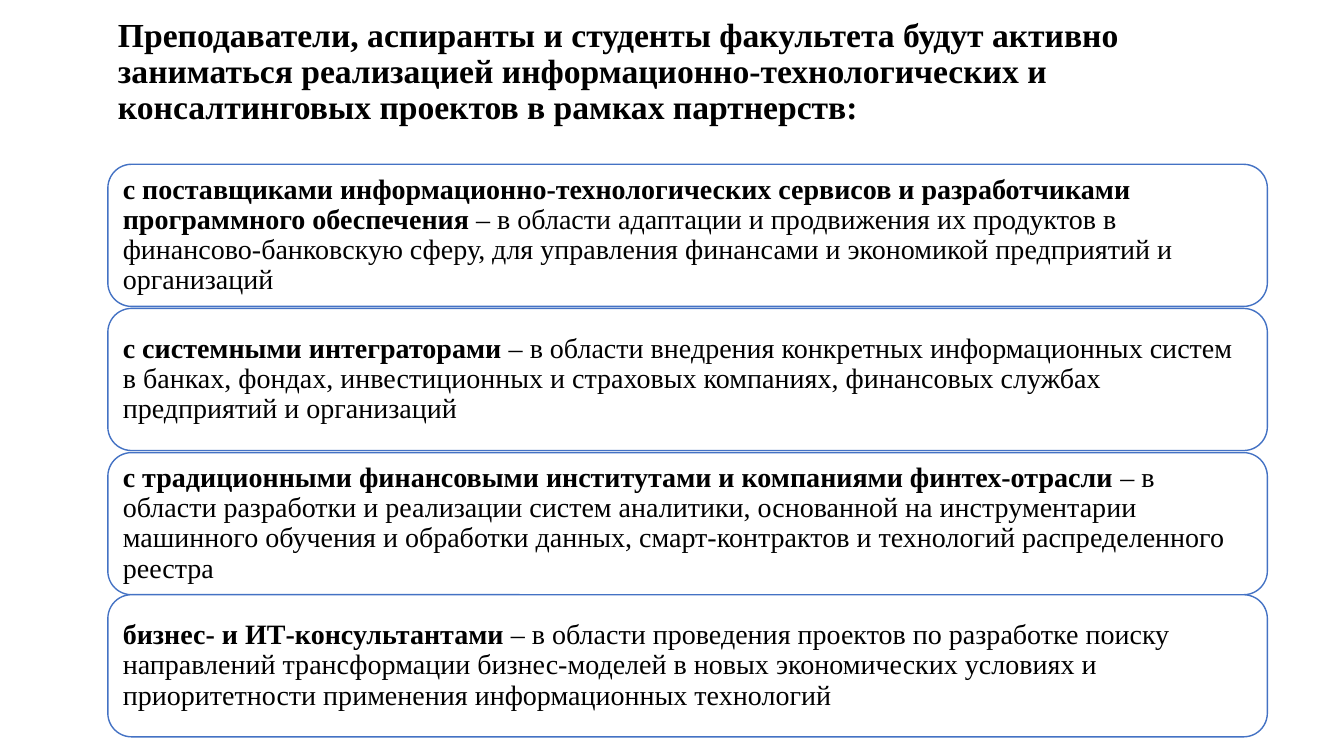
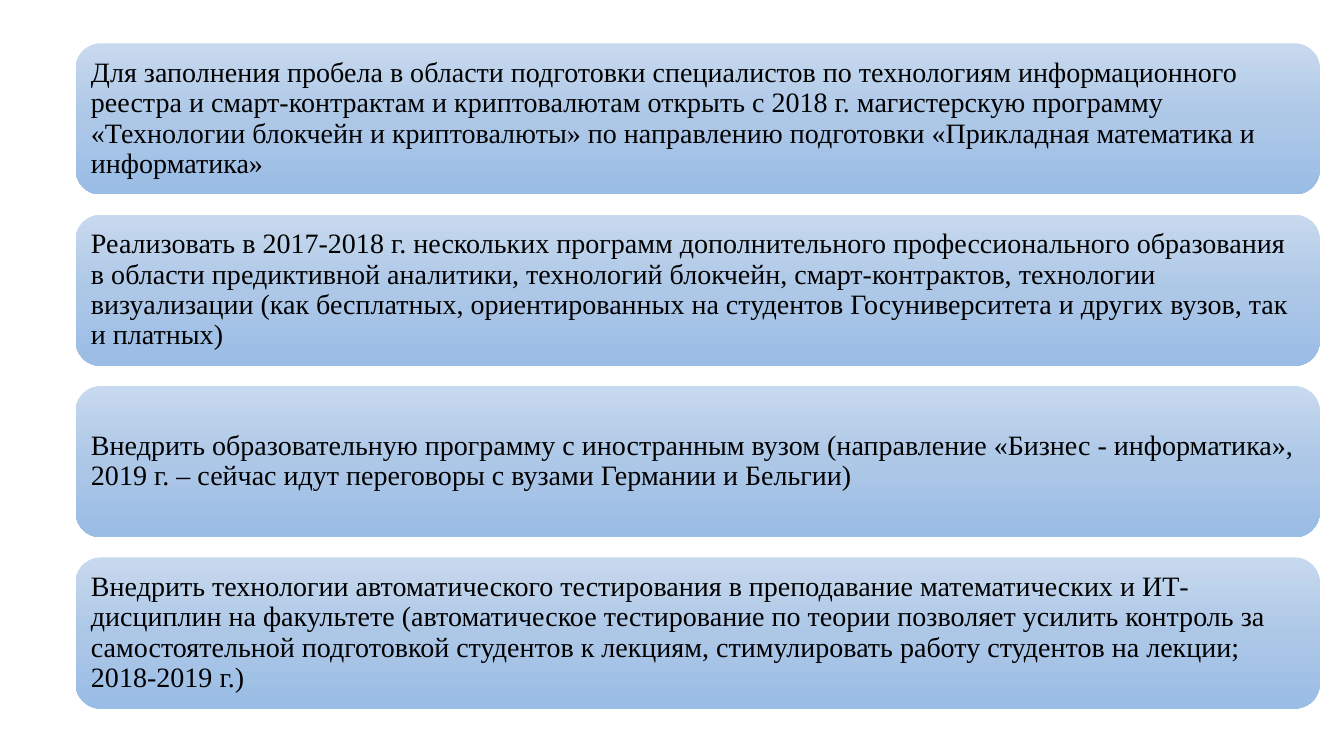
import copy

import pptx
import pptx.dml.color
import pptx.enum.shapes
import pptx.enum.text
import pptx.oxml.ns
import pptx.util

Inches = pptx.util.Inches
Pt = pptx.util.Pt
RGBColor = pptx.dml.color.RGBColor

BLACK = RGBColor(0x00, 0x00, 0x00)
WHITE = RGBColor(0xFF, 0xFF, 0xFF)
OUTLINE_BLUE = RGBColor(0x44, 0x72, 0xC4)
GRADIENT_BLUES = (
    RGBColor(0xC7, 0xD9, 0xEE),
    RGBColor(0xAD, 0xC7, 0xE7),
    RGBColor(0x9A, 0xBD, 0xE5),
)
FONT = "Times New Roman"
TITLE_SIZE = 24
BODY_SIZE = 20

PARTNERSHIP_TITLE = (
    "Преподаватели, аспиранты и студенты факультета будут активно заниматься "
    "реализацией информационно-технологических и консалтинговых проектов "
    "в рамках партнерств:"
)
PARTNERS = [
    ("с поставщиками информационно-технологических сервисов и разработчиками "
     "программного обеспечения ",
     "– в области адаптации и продвижения их продуктов в финансово-банковскую "
     "сферу, для управления финансами и экономикой предприятий и организаций"),
    ("с системными интеграторами ",
     "– в области внедрения конкретных информационных систем в банках, фондах, "
     "инвестиционных и страховых компаниях, финансовых службах предприятий "
     "и организаций"),
    ("с традиционными финансовыми институтами и компаниями финтех-отрасли ",
     "– в области разработки и реализации систем аналитики, основанной на "
     "инструментарии машинного обучения и обработки данных, смарт-контрактов "
     "и технологий распределенного реестра"),
    ("бизнес- и ИТ-консультантами ",
     "– в области проведения проектов по разработке поиску направлений "
     "трансформации бизнес-моделей в новых экономических условиях "
     "и приоритетности применения информационных технологий"),
]
PLANS = [
    "Для заполнения пробела в области подготовки специалистов по технологиям "
    "информационного реестра и смарт-контрактам и криптовалютам открыть "
    "с 2018 г. магистерскую программу «Технологии блокчейн и криптовалюты» "
    "по направлению подготовки «Прикладная математика и информатика»",
    "Реализовать в 2017-2018 г. нескольких программ дополнительного "
    "профессионального образования в области предиктивной аналитики, технологий "
    "блокчейн, смарт-контрактов, технологии визуализации (как бесплатных, "
    "ориентированных на студентов Госуниверситета и других вузов, так и платных)",
    "Внедрить образовательную программу с иностранным вузом (направление "
    "«Бизнес - информатика», 2019 г. – сейчас идут переговоры с вузами "
    "Германии и Бельгии)",
    "Внедрить технологии автоматического тестирования в преподавание "
    "математических и ИТ-дисциплин на факультете (автоматическое тестирование "
    "по теории позволяет усилить контроль за самостоятельной подготовкой "
    "студентов к лекциям, стимулировать работу студентов на лекции; 2018-2019 г.)",
]


def add_runs(paragraph, runs, size):
    """Fill a left-aligned paragraph with (text, bold) runs."""
    paragraph.alignment = pptx.enum.text.PP_ALIGN.LEFT
    paragraph.line_spacing = 0.9
    for text, bold in runs:
        run = paragraph.add_run()
        run.text = text
        run.font.name = FONT
        run.font.size = Pt(size)
        run.font.bold = bold
        run.font.color.rgb = BLACK


def add_title(slide, box, text):
    """Place the slide title in the given box."""
    title = slide.shapes.title
    title.left, title.top, title.width, title.height = map(Inches, box)
    frame = title.text_frame
    frame.word_wrap = True
    frame.auto_size = pptx.enum.text.MSO_AUTO_SIZE.NONE
    frame.vertical_anchor = pptx.enum.text.MSO_ANCHOR.TOP
    add_runs(frame.paragraphs[0], [(text, True)], TITLE_SIZE)


def style_outlined(card):
    """Give a card a white fill and a thin blue outline."""
    card.fill.solid()
    card.fill.fore_color.rgb = WHITE
    card.line.color.rgb = OUTLINE_BLUE
    card.line.width = Pt(1)


def style_gradient(card):
    """Give a card a three-stop vertical gradient and no outline."""
    card.fill.gradient()
    card.fill.gradient_angle = 270
    first_stop = card._element.spPr.find(".//" + pptx.oxml.ns.qn("a:gs"))
    first_stop.addnext(copy.deepcopy(first_stop))
    for index, (stop, blue) in enumerate(zip(card.fill.gradient_stops, GRADIENT_BLUES)):
        stop.position = index / 2
        stop.color.rgb = blue
    card.line.fill.background()


def add_card(slide, box, runs, style):
    """Place one rounded card with its text in the given box."""
    card = slide.shapes.add_shape(
        pptx.enum.shapes.MSO_SHAPE.ROUNDED_RECTANGLE, *map(Inches, box))
    card.shadow.inherit = False
    style(card)
    frame = card.text_frame
    frame.word_wrap = True
    frame.vertical_anchor = pptx.enum.text.MSO_ANCHOR.MIDDLE
    frame.margin_left = frame.margin_right = Inches(0.08)
    frame.margin_top = frame.margin_bottom = Inches(0.08)
    paragraph = frame.paragraphs[0]
    paragraph.space_after = Pt(7)
    add_runs(paragraph, runs, BODY_SIZE)


def build_partnerships(deck):
    """Build the titled slide of outlined partnership cards."""
    slide = deck.slides.add_slide(deck.slide_layouts[5])
    left, width = 1.07, 11.5
    add_title(slide, (left, 0.13, width, 1.44), PARTNERSHIP_TITLE)
    for top, (partner, field) in zip((1.63, 3.06, 4.49, 5.9), PARTNERS):
        add_card(slide, (left, top, width, 1.41),
                 [(partner, True), (field, False)], style_outlined)


def build_plans(deck):
    """Build the slide of evenly spaced gradient plan cards."""
    slide = deck.slides.add_slide(deck.slide_layouts[6])
    height, gap = 1.5, 0.2
    for row, plan in enumerate(PLANS):
        add_card(slide, (0.75, 0.43 + row * (height + gap), 12.34, height),
                 [(plan, False)], style_gradient)


def main():
    """Build and save the deck."""
    deck = pptx.Presentation()
    deck.slide_width = Inches(13.33)
    deck.slide_height = Inches(7.5)
    build_partnerships(deck)
    build_plans(deck)
    deck.save("out.pptx")


if __name__ == "__main__":
    main()
